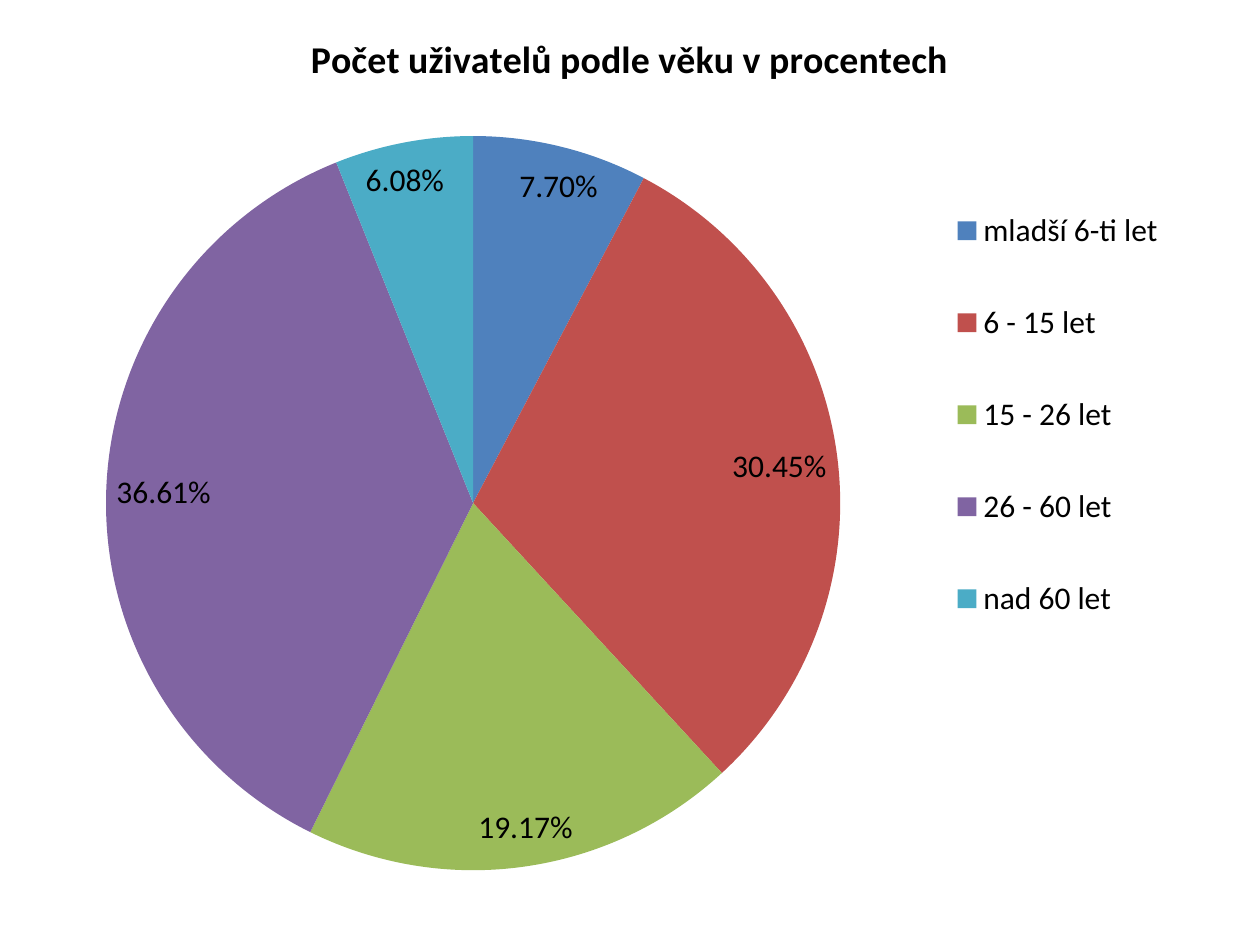
import pptx
import pptx.chart.data
import pptx.dml.color
import pptx.enum.chart
import pptx.oxml
import pptx.util

EMU_PER_PX = 914400 // 126
WIDTH, HEIGHT = 1260, 945
TITLE = "Počet uživatelů podle věku v procentech"
AGES = {
    "mladší 6-ti let": 0.077,
    "6 - 15 let": 0.3045,
    "15 - 26 let": 0.1917,
    "26 - 60 let": 0.3661,
    "nad 60 let": 0.0608,
}
COLORS = {
    "text": "000000",
    "mladší 6-ti let": "4F81BD",
    "6 - 15 let": "C0504D",
    "15 - 26 let": "9BBB59",
    "26 - 60 let": "8064A2",
    "nad 60 let": "4BACC6",
}


def px(n):
    """Turn pixels into EMU."""
    return pptx.util.Emu(n * EMU_PER_PX)


def rgb(name):
    """Look up a named colour."""
    return pptx.dml.color.RGBColor.from_string(COLORS[name])


def style_font(font, size, bold=False):
    """Apply the chart's typeface and colour at a given size."""
    font.name = "Calibri"
    font.size = pptx.util.Pt(size)
    font.bold = bold
    font.color.rgb = rgb("text")


def make_layout(x, y, w, h, inner=False):
    """Build a manual chart layout from pixel lengths."""
    values = {"xMode": "edge", "yMode": "edge", "x": round(x / WIDTH, 3),
              "y": round(y / HEIGHT, 3), "w": round(w / WIDTH, 3),
              "h": round(h / HEIGHT, 3)}
    if inner:
        values = {"layoutTarget": "inner", **values}
    body = "".join(f'<c:{k} val="{v}"/>' for k, v in values.items())
    ns = "http://schemas.openxmlformats.org/drawingml/2006/chart"
    return pptx.oxml.parse_xml(
        f'<c:layout xmlns:c="{ns}"><c:manualLayout>{body}</c:manualLayout></c:layout>')


def add_title(chart):
    """Write the chart title."""
    p = chart.chart_title.text_frame.paragraphs[0]
    p.text = TITLE
    style_font(p.runs[0].font, 21.6, bold=True)
    chart.chart_title.include_in_layout = False


def add_legend(chart):
    """Place the legend to the right of the pie."""
    chart.has_legend = True
    legend = chart.legend
    legend.position = pptx.enum.chart.XL_LEGEND_POSITION.RIGHT
    legend.include_in_layout = False
    style_font(legend.font, 18)
    legend._element.find(pptx.oxml.ns.qn("c:legendPos")).addnext(
        make_layout(942, 158, 230, 514))


def style_pie(chart):
    """Colour the slices, label them and fix the plot area."""
    plot = chart.plots[0]
    plot.vary_by_categories = True
    for i, age in enumerate(AGES):
        fill = plot.series[0].points[i].format.fill
        fill.solid()
        fill.fore_color.rgb = rgb(age)
    labels = plot.series[0].data_labels
    labels.show_value = True
    labels.show_percentage = False
    labels.number_format = "0.00%"
    labels.number_format_is_linked = False
    labels.position = pptx.enum.chart.XL_LABEL_POSITION.BEST_FIT
    style_font(labels.font, 18)
    area = plot._element.getparent()
    for old in area.findall(pptx.oxml.ns.qn("c:layout")):
        area.remove(old)
    area.insert(0, make_layout(106, 136, 734, 734, inner=True))


def add_pie(slide):
    """Add the full-slide pie chart."""
    data = pptx.chart.data.CategoryChartData(number_format="0.00%")
    data.categories = list(AGES)
    data.add_series(TITLE, list(AGES.values()))
    chart = slide.shapes.add_chart(
        pptx.enum.chart.XL_CHART_TYPE.PIE, 0, 0, px(WIDTH), px(HEIGHT), data).chart
    style_font(chart.font, 18)
    add_title(chart)
    add_legend(chart)
    style_pie(chart)


def main():
    """Build and save the slide."""
    prs = pptx.Presentation()
    prs.slide_width, prs.slide_height = px(WIDTH), px(HEIGHT)
    add_pie(prs.slides.add_slide(prs.slide_layouts[6]))
    prs.save("out.pptx")


if __name__ == "__main__":
    main()
